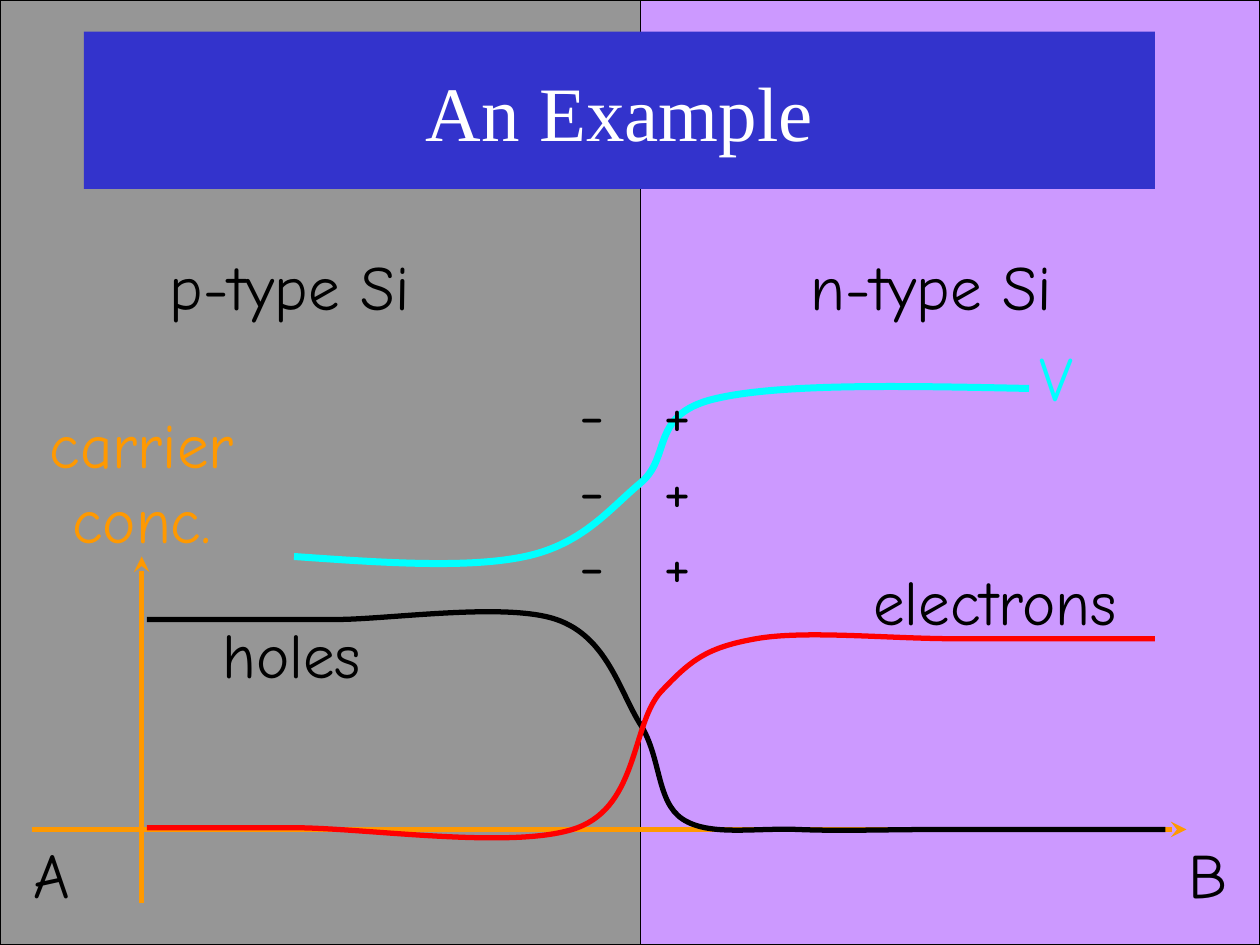
from lxml.etree import SubElement
from pptx import Presentation
from pptx.dml.color import RGBColor
from pptx.enum.shapes import MSO_CONNECTOR as Connector, MSO_SHAPE as Shape
from pptx.enum.text import MSO_ANCHOR as Anchor, MSO_AUTO_SIZE as AutoSize, PP_ALIGN as Align
from pptx.oxml.ns import qn
from pptx.util import Pt

BLACK = RGBColor(0x00, 0x00, 0x00)
WHITE = RGBColor(0xFF, 0xFF, 0xFF)
GREY = RGBColor(0x96, 0x96, 0x96)
LILAC = RGBColor(0xCC, 0x99, 0xFF)
BLUE = RGBColor(0x33, 0x33, 0xCC)
ORANGE = RGBColor(0xFF, 0x99, 0x00)
RED = RGBColor(0xFF, 0x00, 0x00)
CYAN = RGBColor(0x00, 0xFF, 0xFF)

WIDTH, HEIGHT, JUNCTION = 720, 540, 366

TITLE = ("An Example", (48, 18, 612, 90))
REGIONS = [
    (JUNCTION, WIDTH - JUNCTION, LILAC),
    (0, JUNCTION, GREY),
]
AXES = [
    ((81, 516), (81, 318)),
    ((18, 474), (678, 474)),
]
CURVES = [
    ([(84, 354), (138, 354), (192, 354), (318, 354), (366, 414), (390, 468),
      (456, 474), (540, 474), (666, 474)], BLACK, 3),
    ([(84, 473), (168, 473), (330, 473), (378, 395), (432, 365), (546, 365),
      (660, 365)], RED, 3),
    ([(168, 318), (300, 318), (366, 276), (408, 228), (588, 222)], CYAN, 4),
]
LABELS = [
    ("A", (12, 474, 41, 51), BLACK, Align.LEFT),
    ("B", (672, 474, 37.5, 51), BLACK, Align.LEFT),
    ("carrier\nconc.", (14.5, 228, 133, 94), ORANGE, Align.CENTER),
    ("holes", (120, 348, 101.5, 50.5), BLACK, Align.LEFT),
    ("electrons", (492, 318, 172, 50.5), BLACK, Align.LEFT),
    ("p-type Si", (90, 138, 172, 51), BLACK, Align.LEFT),
    ("n-type Si", (456, 138, 172, 51), BLACK, Align.LEFT),
    ("-\n-\n-", (324, 210, 29.5, 138), BLACK, Align.LEFT),
    ("+\n+\n+", (372, 210, 31.5, 138), BLACK, Align.LEFT),
    ("V", (587, 190, 38, 50.5), CYAN, Align.LEFT),
]


def write(frame, text, *, size=36, font="Comic Neue", color=BLACK,
          align=Align.LEFT, anchor=Anchor.TOP):
    frame.text = text
    frame.vertical_anchor = anchor
    for paragraph in frame.paragraphs:
        paragraph.alignment = align
        paragraph.font.size = Pt(size)
        paragraph.font.name = font
        paragraph.font.color.rgb = color


def midpoint(a, b):
    return [(u + v) / 2 for u, v in zip(a, b)]


def bezier_points(knots):
    handles = []
    for before, knot, after in zip(knots, knots[1:], knots[2:]):
        slope = [(b - a) / 6 for a, b in zip(before, after)]
        handles.append(([k - s for k, s in zip(knot, slope)],
                        [k + s for k, s in zip(knot, slope)]))
    points = [knots[0], midpoint(knots[0], handles[0][0])]
    for knot, (arrive, leave) in zip(knots[1:], handles):
        points += [arrive, knot, leave]
    points += [midpoint(handles[-1][1], knots[-1]), knots[-1]]
    return [(Pt(x), Pt(y)) for x, y in points]


def add_region(slide, left, width, color):
    region = slide.shapes.add_shape(Shape.RECTANGLE, Pt(left), 0, Pt(width), Pt(HEIGHT))
    region.shadow.inherit = False
    region.fill.solid()
    region.fill.fore_color.rgb = color
    region.line.color.rgb = BLACK
    region.line.width = Pt(0.75)
    slide.shapes.title.element.addprevious(region.element)


def add_title(slide, text, box):
    title = slide.shapes.title
    title.left, title.top, title.width, title.height = map(Pt, box)
    title.fill.solid()
    title.fill.fore_color.rgb = BLUE
    write(title.text_frame, text, size=44, font="Times New Roman", color=WHITE,
          align=Align.CENTER, anchor=Anchor.MIDDLE)


def add_axis(slide, start, end):
    axis = slide.shapes.add_connector(Connector.STRAIGHT, *map(Pt, start + end))
    axis.line.color.rgb = ORANGE
    axis.line.width = Pt(3)
    outline = axis.element.spPr.find(qn("a:ln"))
    SubElement(outline, qn("a:tailEnd"), type="stealth")
    SubElement(axis.element.spPr, qn("a:effectLst"))


def add_curve(slide, knots, color, weight):
    start, *rest = bezier_points(knots)
    builder = slide.shapes.build_freeform(*start)
    builder.add_line_segments(rest, close=False)
    curve = builder.convert_to_shape()
    segments = list(curve.element.iter(qn("a:lnTo")))
    for leave, arrive, end in zip(segments[::3], segments[1::3], segments[2::3]):
        leave.tag = qn("a:cubicBezTo")
        for extra in (arrive, end):
            leave.append(extra[0])
            extra.getparent().remove(extra)
    curve.shadow.inherit = False
    curve.fill.background()
    curve.line.color.rgb = color
    curve.line.width = Pt(weight)


def add_label(slide, text, box, color, align):
    frame = slide.shapes.add_textbox(*map(Pt, box)).text_frame
    frame.word_wrap = False
    frame.auto_size = AutoSize.SHAPE_TO_FIT_TEXT
    write(frame, text, color=color, align=align)


def main():
    deck = Presentation()
    deck.slide_width, deck.slide_height = Pt(WIDTH), Pt(HEIGHT)
    slide = deck.slides.add_slide(deck.slide_layouts[5])
    add_title(slide, *TITLE)
    for region in REGIONS:
        add_region(slide, *region)
    for axis in AXES:
        add_axis(slide, *axis)
    for curve in CURVES:
        add_curve(slide, *curve)
    for label in LABELS:
        add_label(slide, *label)
    deck.save("out.pptx")


if __name__ == "__main__":
    main()
